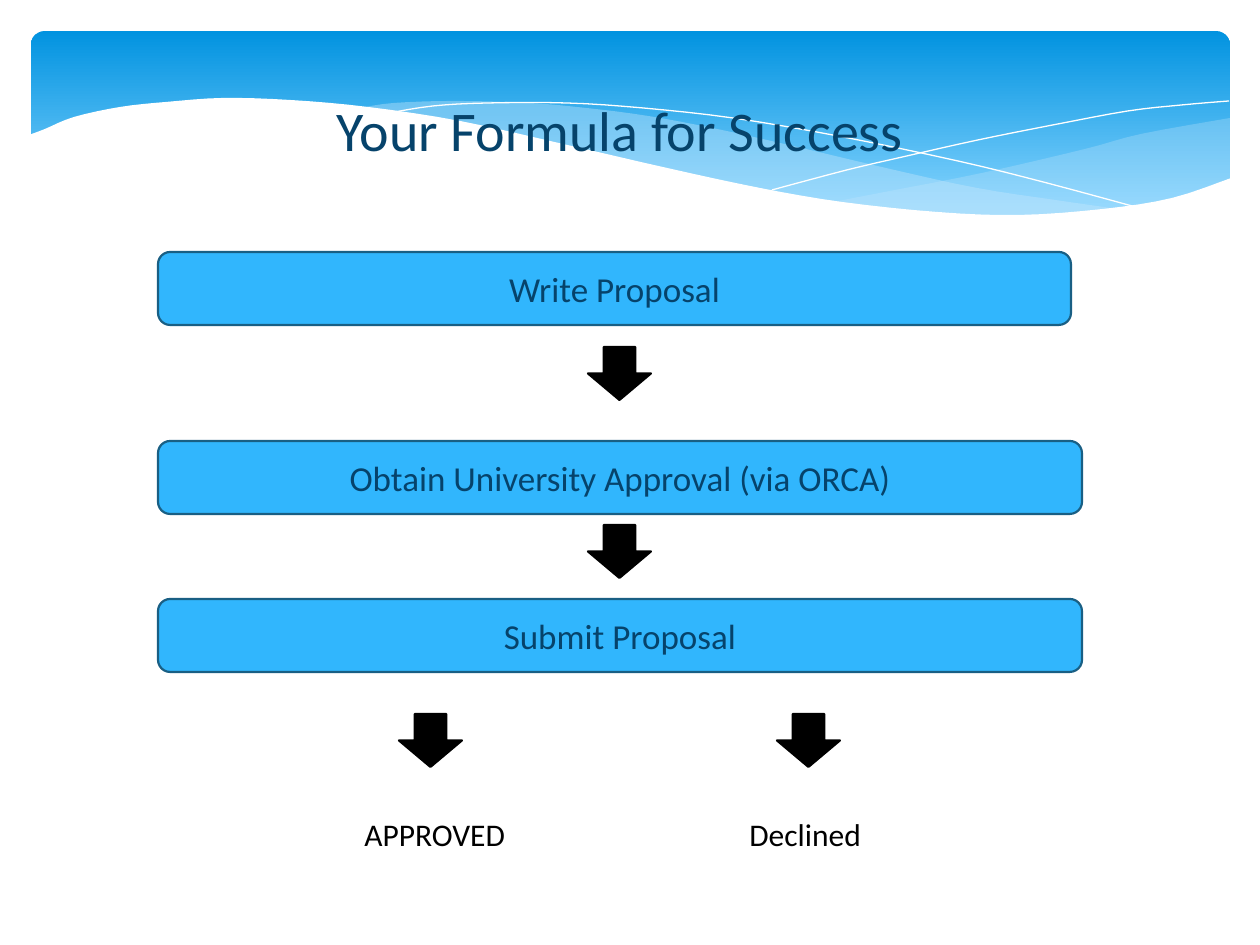
import pptx
import pptx.util
import pptx.dml.color
import pptx.enum.shapes
import pptx.enum.text
import pptx.oxml.ns
import lxml.etree

PX = 914400 / 126  # EMU in one px
KIND = pptx.enum.shapes.MSO_SHAPE
ALIGN = pptx.enum.text.PP_ALIGN
ANCHOR = pptx.enum.text.MSO_ANCHOR

THEME = {
    "font": "Calibri",
    "title_size": 32, "step_size": 20, "result_size": 18,
    "navy": "06436B", "black": "000000", "white": "FFFFFF",
    "step": "31B6FD", "step_edge": "195F84", "edge_width": 1.25,
    "sky_top": "0293E0", "sky_bottom": "83D3FE", "mist": "C6E7FC",
}

# Knots of the banner's curves, in px
RIGHT_WAVE = [
    [(1230, 118), (1141, 134), (1085, 149), (982, 173), (890, 191), (833, 202)],
    [(833, 202), (888, 208), (954, 213), (1026, 217), (1087, 214), (1140, 205),
     (1187, 194), (1230, 178)],
]
MIDDLE_WAVE = [
    [(1125, 210), (1055, 200), (977, 188), (890, 169), (793, 146), (717, 129),
     (648, 116), (586, 108), (529, 103), (455, 101), (394, 103), (360, 108)],
    [(360, 108), (431, 118), (509, 134), (566, 146), (668, 170), (757, 189),
     (838, 203), (910, 212), (989, 217), (1056, 217), (1104, 213), (1125, 210)],
]
FALLING_LINE = [(389, 113), (433, 106), (487, 103), (567, 103), (643, 108),
                (733, 118), (838, 136), (958, 161), (1047, 183), (1143, 209)]
RISING_LINE = [(772, 190), (847, 170), (907, 156), (978, 140), (1053, 125),
               (1128, 111), (1182, 105), (1229, 101)]
WHITE_WAVE = [
    [(1231, 178), (1172, 198), (1103, 209), (1019, 215), (937, 212), (842, 202),
     (760, 188), (667, 168), (563, 144), (460, 121), (368, 107), (290, 100),
     (223, 98), (166, 102), (120, 107), (74, 117), (45, 129), (29, 135)],
    [(29, 282), (1231, 282)],
]

# Flow of the proposal: text, top, width
STEPS = [("Write Proposal", 252, 913),
         ("Obtain University Approval (via ORCA)", 441, 924),
         ("Submit Proposal", 599, 924)]
ARROWS = [(588, 347), (588, 525), (399, 714), (777, 714)]


def emu(*lengths):
    return [round(length * PX) for length in lengths]


def color(name):
    return pptx.dml.color.RGBColor.from_string(THEME[name])


def set_all(target, values):
    for name, value in values.items():
        setattr(target, name, value)


def paint(shape, fill=None, line=None, width=0):
    shape.shadow.inherit = False
    for part, name in ((shape.fill, fill), (shape.line.fill, line)):
        if name:
            part.solid()
            part.fore_color.rgb = color(name)
        else:
            part.background()
    if line:
        shape.line.width = pptx.util.Pt(width)


def write(box, text, size, ink, frame_format, para_format):
    frame = box.text_frame
    set_all(frame, frame_format)
    para = frame.paragraphs[0]
    set_all(para, para_format)
    span = para.add_run()
    span.text = text
    set_all(span.font, {"name": THEME["font"], "size": pptx.util.Pt(THEME[size])})
    span.font.color.rgb = color(ink)
    return para


def smooth(knots, pieces=4):
    """Points of a Catmull-Rom spline through the knots."""
    padded = [knots[0], *knots, knots[-1]]
    points = [knots[0]]
    for a, b, c, d in zip(padded, padded[1:], padded[2:], padded[3:]):
        for step in range(1, pieces + 1):
            t = step / pieces
            points.append(tuple(
                (2 * q + (r - p) * t + (2 * p - 5 * q + 4 * r - s) * t ** 2
                 + (3 * q - p - 3 * r + s) * t ** 3) / 2
                for p, q, r, s in zip(a, b, c, d)))
    return points


def add_curve(page, edges, closed, **look):
    start, *rest = [point for edge in edges for point in smooth(edge)]
    builder = page.shapes.build_freeform(*emu(*start))
    builder.add_line_segments([emu(*point) for point in rest], close=closed)
    curve = builder.convert_to_shape()
    paint(curve, **look)
    return curve


def add_wave(page, edges, fill, opacity=100):
    wave = add_curve(page, edges, True, fill=fill)
    if opacity < 100:
        qn = pptx.oxml.ns.qn
        tint = wave.fill._xPr.find(qn("a:solidFill")).find(qn("a:srgbClr"))
        lxml.etree.SubElement(tint, qn("a:alpha")).set("val", str(opacity * 1000))


def add_banner(page):
    banner = page.shapes.add_shape(KIND.ROUNDED_RECTANGLE, *emu(31, 31, 1199, 197))
    banner.adjustments[0] = 0.07
    paint(banner)
    banner.fill.gradient()
    banner.fill.gradient_angle = 270
    stops = banner.fill.gradient_stops
    for stop, position, name in zip(stops, (0, 0.9), ("sky_top", "sky_bottom")):
        stop.position = position
        stop.color.rgb = color(name)
    add_wave(page, RIGHT_WAVE, "mist", 29)
    add_wave(page, MIDDLE_WAVE, "mist", 40)
    for knots in (FALLING_LINE, RISING_LINE):
        add_curve(page, [knots], False, line="white")
    add_wave(page, WHITE_WAVE, "white")


def add_step(page, text, top, width):
    box = page.shapes.add_shape(KIND.ROUNDED_RECTANGLE, *emu(158, top, width, 73))
    paint(box, "step", "step_edge", THEME["edge_width"])
    write(box, text, "step_size", "navy",
          {"word_wrap": True, "vertical_anchor": ANCHOR.MIDDLE},
          {"alignment": ALIGN.CENTER})


def add_arrow(page, left, top):
    arrow = page.shapes.add_shape(KIND.DOWN_ARROW, *emu(left, top, 63, 53))
    paint(arrow, "black", "black", THEME["edge_width"])


def add_result(page, text, left, width, para_format):
    box = page.shapes.add_textbox(*emu(left, 809, width, 50))
    return write(box, text, "result_size", "black", {"word_wrap": False}, para_format)


def add_title(page, text):
    title = page.shapes.title
    set_all(title, dict(zip(("left", "top", "width", "height"),
                            emu(158, 89, 924, 81))))
    write(title, text, "title_size", "navy",
          {"word_wrap": True, "vertical_anchor": ANCHOR.MIDDLE},
          {"alignment": ALIGN.CENTER})
    page.shapes._spTree.append(title._element)  # in front of the banner


def main():
    deck = pptx.Presentation()
    deck.slide_width, deck.slide_height = emu(1260, 945)
    page = deck.slides.add_slide(deck.slide_layouts[5])

    add_banner(page)
    for step in STEPS:
        add_step(page, *step)
    for place in ARROWS:
        add_arrow(page, *place)

    # Outcomes; the first has a hanging indent
    declined = add_result(page, "Declined", 737, 142,
                          {"space_before": pptx.util.Pt(6)})
    indent = emu(38)[0]
    for name, value in (("marL", indent), ("indent", -indent)):
        declined._p.get_or_add_pPr().set(name, str(value))
    add_result(page, "APPROVED", 352, 176, {})

    add_title(page, "Your Formula for Success")
    deck.save("out.pptx")


if __name__ == "__main__":
    main()
